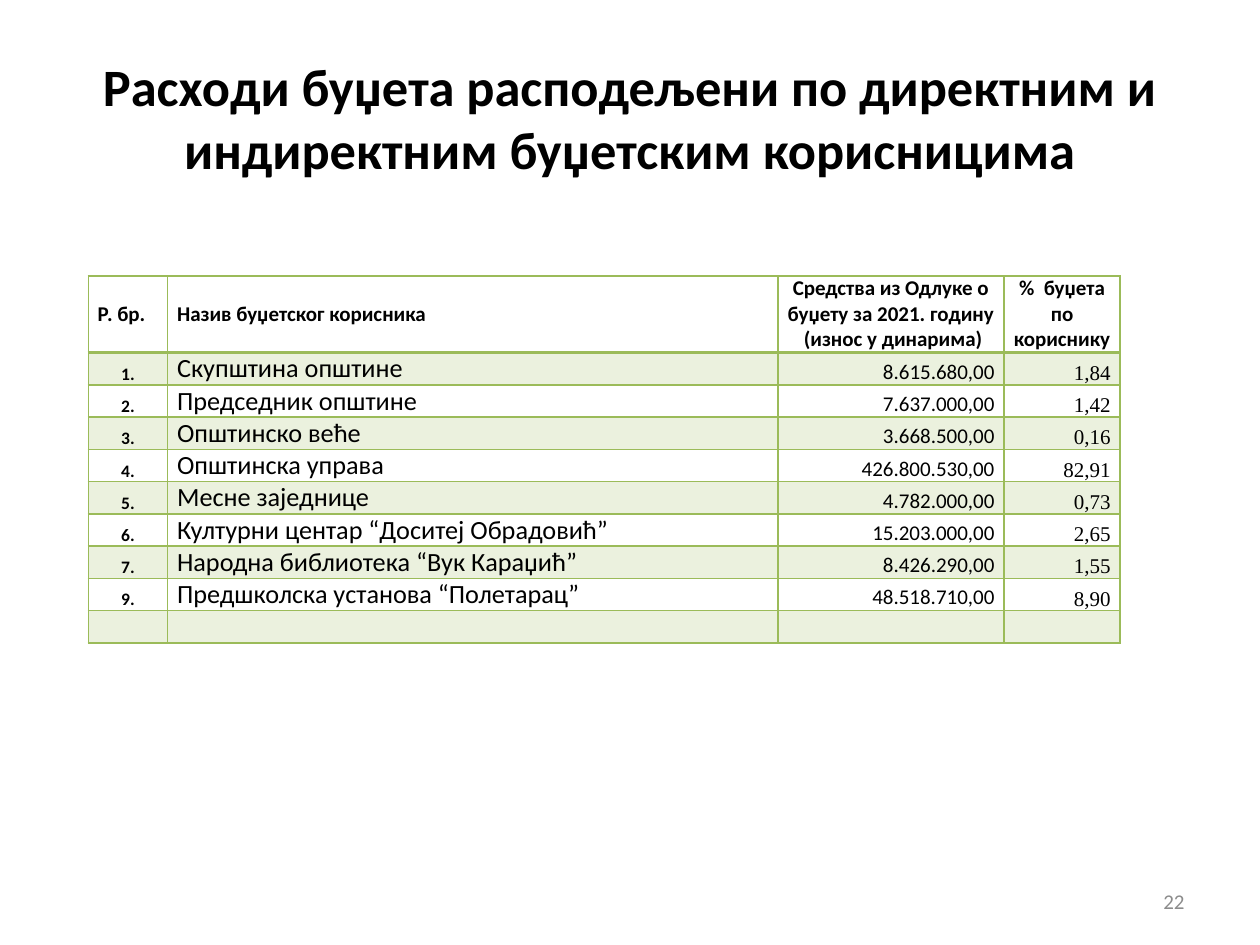
from dataclasses import dataclass

from lxml import etree
from pptx import Presentation
from pptx.dml.color import RGBColor
from pptx.enum.text import MSO_ANCHOR, PP_ALIGN
from pptx.oxml.ns import qn
from pptx.util import Cm, Pt

LEFT, CENTER, RIGHT = PP_ALIGN.LEFT, PP_ALIGN.CENTER, PP_ALIGN.RIGHT
MIDDLE, BOTTOM = MSO_ANCHOR.MIDDLE, MSO_ANCHOR.BOTTOM

COLORS = {"text": "000000", "border": "9BBB59", "band": "EBF1DE", "number": "8C8C8C"}


@dataclass
class Column:
    width: float
    header: str
    header_align: PP_ALIGN
    align: PP_ALIGN
    size: float
    font: str = "Calibri"
    bold: bool = False


@dataclass
class Beneficiary:
    number: str
    name: str
    amount: str
    share: str


COLUMNS = [
    Column(1.6, "Р. бр.", LEFT, CENTER, 10, bold=True),
    Column(12.3, "Назив буџетског корисника", LEFT, LEFT, 15),
    Column(4.56, "Средства из Одлуке о буџету за 2021. годину  (износ у динарима)",
           CENTER, RIGHT, 12),
    Column(2.34, "%  буџета по кориснику", CENTER, RIGHT, 12, "Times New Roman"),
]

BENEFICIARIES = [
    Beneficiary("1.", "Скупштина општине", "8.615.680,00", "1,84"),
    Beneficiary("2.", "Председник општине", "7.637.000,00", "1,42"),
    Beneficiary("3.", "Општинско веће", "3.668.500,00", "0,16"),
    Beneficiary("4.", "Општинска управа", "426.800.530,00", "82,91"),
    Beneficiary("5.", "Месне заједнице", "4.782.000,00", "0,73"),
    Beneficiary("6.", "Културни центар “Доситеј Обрадовић”", "15.203.000,00", "2,65"),
    Beneficiary("7.", "Народна библиотека “Вук Караџић”", "8.426.290,00", "1,55"),
    Beneficiary("9.", "Предшколска установа “Полетарац”", "48.518.710,00", "8,90"),
    Beneficiary("", "", "", ""),
]

HEADER_HEIGHT, ROW_HEIGHT = 1.55, 0.65


def write(tf, text: str, *, size: float, font: str = "Calibri", bold: bool = False,
          color: str = "text", align: PP_ALIGN = LEFT, anchor: MSO_ANCHOR = MIDDLE) -> None:
    tf.word_wrap = True
    tf.vertical_anchor = anchor
    p = tf.paragraphs[0]
    p.alignment = align
    r = p.add_run()
    r.text = text
    r.font.size = Pt(size)
    r.font.name = font
    r.font.bold = bold
    r.font.color.rgb = RGBColor.from_string(COLORS[color])


def set_borders(cell, widths: dict[str, float]) -> None:
    tc_pr = cell._tc.get_or_add_tcPr()
    for side, width in widths.items():
        ln = etree.SubElement(tc_pr, qn(f"a:ln{side}"), w=str(Pt(width)))
        fill = etree.SubElement(ln, qn("a:solidFill"))
        etree.SubElement(fill, qn("a:srgbClr"), val=COLORS["border"])


def draw_cell(cell, text: str, column: Column, row: int) -> None:
    is_header = row == 0
    cell.margin_left = cell.margin_right = Cm(0.19)
    cell.margin_top = cell.margin_bottom = 0
    cell.vertical_anchor = MIDDLE if is_header else BOTTOM
    set_borders(cell, {"L": 1, "R": 1, "T": 2 if row == 1 else 1, "B": 2 if is_header else 1})
    if row % 2:
        cell.fill.solid()
        cell.fill.fore_color.rgb = RGBColor.from_string(COLORS["band"])
    else:
        cell.fill.background()
    if is_header:
        write(cell.text_frame, text, size=12, bold=True, align=column.header_align)
    elif text:
        write(cell.text_frame, text, size=column.size, font=column.font, bold=column.bold,
              align=column.align, anchor=BOTTOM)
    else:
        p = cell.text_frame.paragraphs[0]
        etree.SubElement(p._p, qn("a:endParaRPr"), sz=str(column.size * 100))


def draw_table(s, left: float, top: float) -> None:
    rows = [[c.header for c in COLUMNS]]
    rows += [[b.number, b.name, b.amount, b.share] for b in BENEFICIARIES]
    width = sum(c.width for c in COLUMNS)
    height = HEADER_HEIGHT + ROW_HEIGHT * len(BENEFICIARIES)
    table = s.shapes.add_table(len(rows), len(COLUMNS), Cm(left), Cm(top),
                               Cm(width), Cm(height)).table
    for j, column in enumerate(COLUMNS):
        table.columns[j].width = Cm(column.width)
    for i, texts in enumerate(rows):
        table.rows[i].height = Cm(ROW_HEIGHT if i else HEADER_HEIGHT)
        for j, text in enumerate(texts):
            draw_cell(table.cell(i, j), text, COLUMNS[j], i)


def main() -> None:
    prs = Presentation()
    prs.slide_width, prs.slide_height = Cm(25.4), Cm(19.05)
    s = prs.slides.add_slide(prs.slide_layouts[5])

    title = s.shapes.title
    title.left, title.top, title.width, title.height = Cm(1.27), Cm(0.76), Cm(22.86), Cm(3.18)
    write(title.text_frame, "Расходи буџета расподељени по директним и "
          "индиректним буџетским корисницима", size=30, bold=True, align=CENTER)

    draw_table(s, 1.78, 5.56)

    page = s.shapes.add_textbox(Cm(18.2), Cm(17.65), Cm(5.93), Cm(1.02))
    write(page.text_frame, "22", size=12, color="number", align=RIGHT)

    prs.save("out.pptx")


if __name__ == "__main__":
    main()
